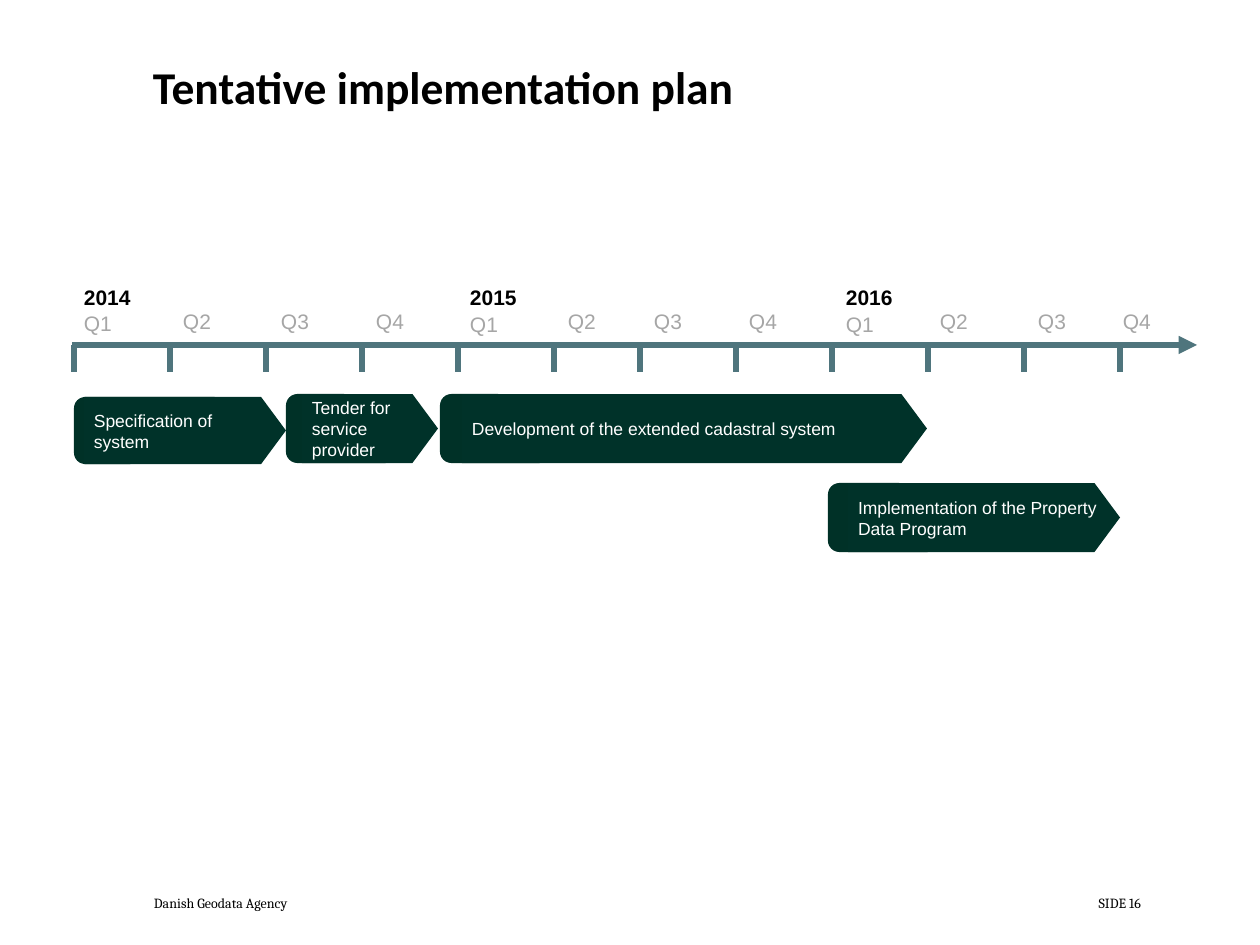
import pptx
import pptx.util
import pptx.dml.color
import pptx.enum.shapes
import pptx.enum.text
import pptx.oxml.ns
from lxml import etree

COLORS = {
    "black": "000000",
    "white": "FFFFFF",
    "quarter": "A6A6A6",
    "axis": "4F757D",
    "stage_start": "003127",
    "stage": "003229",
}
SHAPES = pptx.enum.shapes.MSO_SHAPE
ANCHOR = pptx.enum.text.MSO_ANCHOR
ALIGN = pptx.enum.text.PP_ALIGN


def px(length):
    return pptx.util.Emu(round(length * 914400 / 126))


def color(name):
    return pptx.dml.color.RGBColor.from_string(COLORS[name])


class Timeline:
    """Style of the timeline and the page it is drawn on."""

    def __init__(self, page):
        self.page = page
        self.font = "Arial"
        self.line_width = pptx.util.Pt(3.5)

    def style(self, font, size, name, bold=False, face=None):
        font.name = face or self.font
        font.size = pptx.util.Pt(size)
        font.bold = bold
        font.color.rgb = color(name)

    def frame(self, shape, anchor, margins):
        frame = shape.text_frame
        frame.word_wrap = True
        frame.vertical_anchor = anchor
        (frame.margin_left, frame.margin_top,
         frame.margin_right, frame.margin_bottom) = map(px, margins)
        return frame

    def text(self, at, words, size, face, bold=False, align=ALIGN.LEFT):
        box = self.page.shapes.add_textbox(*map(px, at))
        para = self.frame(box, ANCHOR.BOTTOM, (0, 0, 0, 0)).paragraphs[0]
        para.text = words
        para.alignment = align
        self.style(para.font, size, "black", bold, face)
        return para

    def line(self, start, end, arrow=False):
        line = self.page.shapes.add_connector(
            pptx.enum.shapes.MSO_CONNECTOR.STRAIGHT, *map(px, start + end))
        line.line.color.rgb = color("axis")
        line.line.width = self.line_width
        if arrow:
            etree.SubElement(line.line._get_or_add_ln(),
                             pptx.oxml.ns.qn("a:tailEnd"), type="triangle")
        etree.SubElement(line._element.spPr, pptx.oxml.ns.qn("a:effectLst"))

    def quarter(self, left, top, name, year=None, wrapped=False):
        box = self.page.shapes.add_textbox(*map(px, (left, top, 98, 64)))
        # A quarter without a year sits on the second line, above the axis
        frame = self.frame(box, ANCHOR.TOP, (13, 6 if year else 34, 13, 0))
        para = frame.paragraphs[0]
        if year:
            span = para.add_run()
            span.text = year
            self.style(span.font, 12, "black", bold=True)
            if not wrapped:
                para = frame.add_paragraph()
                para.space_before = pptx.util.Pt(1)
        span = para.add_run()
        span.text = name
        self.style(span.font, 12, "quarter")

    def block(self, kind, at, name):
        block = self.page.shapes.add_shape(kind, *map(px, at))
        block.shadow.inherit = False
        block.fill.solid()
        block.fill.fore_color.rgb = color(name)
        block.line.fill.background()
        return block

    def stage(self, words, left, top, height, start_width, plate_left, right):
        self.block(SHAPES.ROUNDED_RECTANGLE,
                   (left, top, start_width, height), "stage_start")
        plate = self.block(SHAPES.PENTAGON,
                           (plate_left, top, right - plate_left, height), "stage")
        plate.adjustments[0] = 0.37
        para = self.frame(plate, ANCHOR.MIDDLE, (10, 10, 10, 10)).paragraphs[0]
        para.text = words
        para.alignment = ALIGN.LEFT
        self.style(para.font, 10, "white")


def main():
    deck = pptx.Presentation()
    deck.slide_width = pptx.util.Inches(10)
    deck.slide_height = pptx.util.Inches(7.5)
    timeline = Timeline(deck.slides.add_slide(deck.slide_layouts[6]))

    # Title and footer
    title = timeline.text((153, 46, 988, 69), "Tentative implementation plan",
                          26, "Calibri", bold=True)
    title.line_spacing = 0.96
    timeline.text((154, 881, 625, 30), "Danish Geodata Agency", 8, "Cambria")
    timeline.text((1036, 881, 105, 30), "SIDE 16", 8, "Cambria", align=ALIGN.RIGHT)

    # Axis with one tick per quarter; the sixth gap is narrower
    timeline.line((72, 345), (1197, 345), arrow=True)
    for index in range(12):
        tick = 74 + 96 * index - (10 if index > 5 else 0)
        timeline.line((tick, 345), (tick, 372))

    # Quarter labels on one shared height
    lefts = [71, 170, 268, 363, 457, 555, 641, 736, 833, 927, 1025, 1110]
    years = {0: "2014 ", 4: "2015", 8: "2016"}
    for index, left in enumerate(lefts):
        timeline.quarter(left, 279, f"Q{index % 4 + 1}", years.get(index),
                         wrapped=index == 0)

    # Stages: left, top, height, width of rounded start, plate left, right
    stages = [
        ("Implementation of the Property Data Program", 828, 483, 69, 111, 848, 1120),
        ("Development of the extended cadastral system", 440, 394, 69, 111, 462, 927),
        ("Specification of system", 74, 397, 67, 152, 84, 286),
        ("Tender for service provider", 286, 394, 69, 111, 302, 438),
    ]
    for stage in stages:
        timeline.stage(*stage)

    deck.save("out.pptx")


if __name__ == "__main__":
    main()
